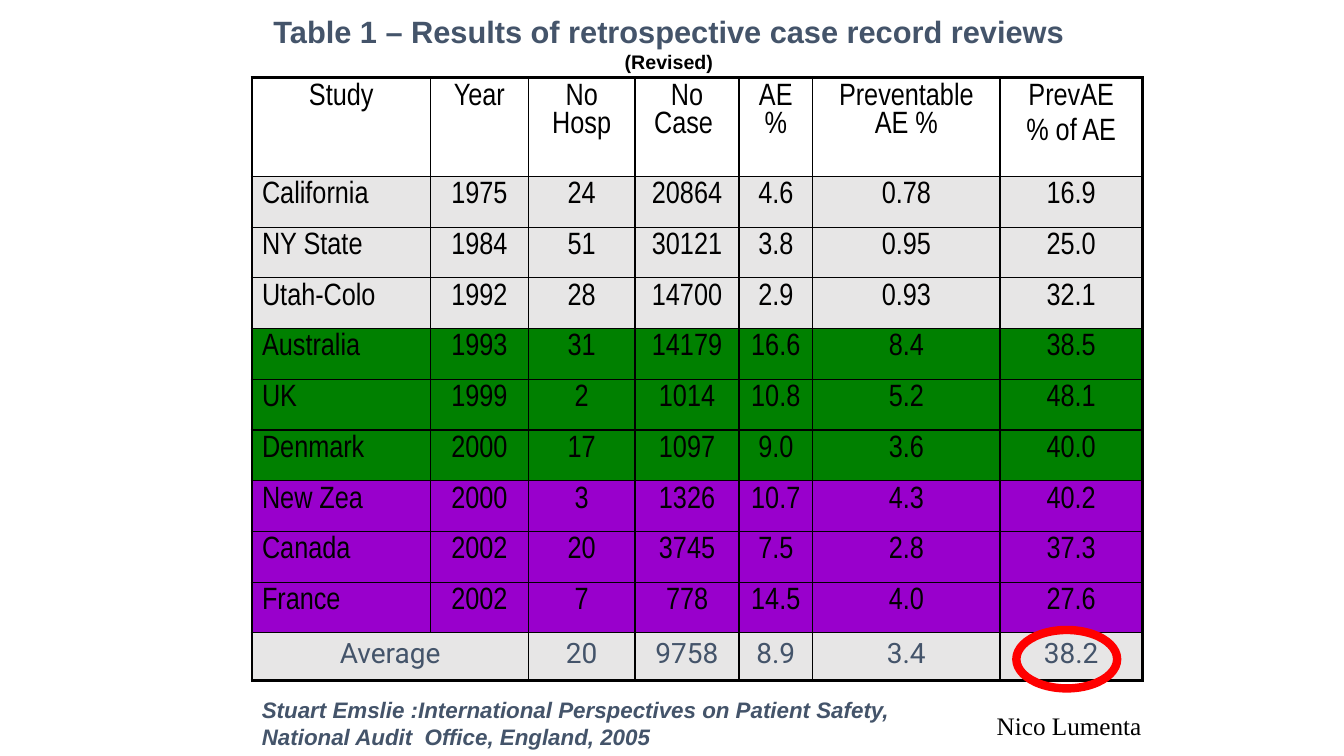
from pptx import Presentation
from pptx.dml.color import RGBColor
from pptx.enum.shapes import MSO_SHAPE
from pptx.enum.text import PP_ALIGN
from pptx.oxml import parse_xml
from pptx.oxml.ns import nsdecls
from pptx.util import Inches, Pt

SLIDE_WIDTH, SLIDE_HEIGHT = Inches(13.33), Inches(7.5)

COLORS = {
    "ink": "000000",
    "slate": "44546A",
    "usa": "E7E6E6",
    "green": "008000",
    "purple": "9900CC",
    "mark": "FF0000",
}

FORMATS = {
    "title": {"name": "Arial", "size": 22, "bold": True, "color": "slate"},
    "revised": {"name": "Arial", "size": 14, "bold": True, "color": "ink"},
    "body": {"name": "Arial Narrow", "size": 22, "bold": False, "color": "ink"},
    "average": {"name": "Roboto", "size": 20, "bold": False, "color": "slate"},
    "source": {"name": "Arial", "size": 16, "bold": True, "italic": True, "color": "slate"},
    "author": {"name": "Times New Roman", "size": 18, "color": "ink"},
}

# Widths and heights in hundredths of the slide
COLUMN_WIDTHS = [13.28, 7.28, 7.95, 7.73, 5.48, 13.95, 10.58]
HEADER_HEIGHT, STUDY_HEIGHT, AVERAGE_HEIGHT = 13.07, 6.71, 6.27

HEADER = ["Study", "Year", "No Hosp", "No Case ", "AE %", "Preventable AE %", "PrevAE\n% of AE"]
STUDIES = [
    ["California", "1975", "24", "20864", "4.6", "0.78", "16.9"],
    ["NY State", "1984", "51", "30121", "3.8", "0.95", "25.0"],
    ["Utah-Colo", "1992", "28", "14700", "2.9", "0.93", "32.1"],
    ["Australia", "1993", "31", "14179", "16.6", "8.4", "38.5"],
    ["UK", "1999", "2", "1014", "10.8", "5.2", "48.1"],
    ["Denmark", "2000", "17", "1097", "9.0", "3.6", "40.0"],
    ["New Zea", "2000", "3", "1326", "10.7", "4.3", "40.2"],
    ["Canada", "2002", "20", "3745", "7.5", "2.8", "37.3"],
    ["France", "2002", "7", "778", "14.5", "4.0", "27.6"],
]
AVERAGE = ["Average", "", "20", "9758", "8.9", "3.4", "38.2"]
STUDY_GROUPS = ["usa", "green", "purple"]
GROUP_SIZE = 3


def across(columns):
    return int(SLIDE_WIDTH * columns / 100)


def down(rows):
    return int(SLIDE_HEIGHT * rows / 100)


def area(left, top, width, height):
    return across(left), down(top), across(width), down(height)


def rgb(key):
    return RGBColor.from_string(COLORS[key])


def add_run(paragraph, text, style):
    run = paragraph.add_run()
    run.text = text
    for attribute, value in FORMATS[style].items():
        if attribute == "color":
            run.font.color.rgb = rgb(value)
        else:
            setattr(run.font, attribute, Pt(value) if attribute == "size" else value)


def write_lines(frame, lines, align, gap=0):
    """Each line is a list of (text, style) runs."""
    for index, runs in enumerate(lines):
        paragraph = frame.add_paragraph() if index else frame.paragraphs[0]
        paragraph.alignment = align
        if index and gap:
            paragraph.space_before = Pt(gap)
        for text, style in runs:
            add_run(paragraph, text, style)


def add_text(slide, place, lines, align, wrap=True):
    frame = slide.shapes.add_textbox(*area(*place)).text_frame
    frame.word_wrap = wrap
    write_lines(frame, lines, align)


def set_borders(cell, widths):
    properties = cell._tc.get_or_add_tcPr()
    for side in "LRTB":
        properties.append(parse_xml(
            f'<a:ln{side} {nsdecls("a")} w="{Pt(widths[side])}"><a:solidFill>'
            f'<a:srgbClr val="{COLORS["ink"]}"/></a:solidFill></a:ln{side}>'
        ))


def add_review_table(slide):
    rows = [HEADER, *STUDIES, AVERAGE]
    heights = [HEADER_HEIGHT] + [STUDY_HEIGHT] * len(STUDIES) + [AVERAGE_HEIGHT]
    last_row, last_column = len(rows) - 1, len(HEADER) - 1
    place = area(18.75, 10.27, sum(COLUMN_WIDTHS), sum(heights))
    table = slide.shapes.add_table(len(rows), len(HEADER), *place).table
    table.first_row = table.horz_banding = False

    for column, width in zip(table.columns, COLUMN_WIDTHS):
        column.width = across(width)
    for row, height in zip(table.rows, heights):
        row.height = down(height)

    for r, values in enumerate(rows):
        is_study = 0 < r < last_row
        group = STUDY_GROUPS[(r - 1) // GROUP_SIZE] if is_study else "usa"
        style = "average" if r == last_row else "body"
        for c, value in enumerate(values):
            cell = table.cell(r, c)
            outer = {"L": c == 0, "R": c == last_column, "T": r == 0, "B": r == last_row}
            set_borders(cell, {side: 2.25 if edge else 1 for side, edge in outer.items()})
            if r == 0:
                cell.fill.background()
            else:
                cell.fill.solid()
                cell.fill.fore_color.rgb = rgb(group)
            align = PP_ALIGN.LEFT if is_study and c == 0 else PP_ALIGN.CENTER
            if value:
                lines = [[(line, style)] for line in value.split("\n")]
                write_lines(cell.text_frame, lines, align, gap=4.4)
    table.cell(last_row, 0).merge(table.cell(last_row, 1))


def add_ring(slide, place):
    ring = slide.shapes.add_shape(MSO_SHAPE.OVAL, *area(*place))
    ring.shadow.inherit = False
    ring.fill.background()
    ring.line.color.rgb = rgb("mark")
    ring.line.width = Pt(6)


def main():
    deck = Presentation()
    deck.slide_width, deck.slide_height = SLIDE_WIDTH, SLIDE_HEIGHT
    slide = deck.slides.add_slide(deck.slide_layouts[6])

    # Source reference
    add_text(slide, (18.75, 91.47, 48.46, 8.53), [
        [("Stuart Emslie :International Perspectives on Patient Safety,", "source")],
        [("National Audit  Office, England, 2005", "source")],
    ], PP_ALIGN.LEFT, wrap=False)

    # Results
    add_review_table(slide)

    # Title
    add_text(slide, (18.75, 1.07, 62.04, 9.47), [[
        ("Table 1 – Results of retrospective case record reviews ", "title"),
        ("(Revised)", "revised"),
    ]], PP_ALIGN.CENTER)

    # Highlighted average and author
    add_ring(slide, (75.62, 83.33, 7.5, 7.73))
    add_text(slide, (70.67, 93.33, 15, 5.33), [[("Nico Lumenta", "author")]], PP_ALIGN.RIGHT)

    deck.save("out.pptx")


if __name__ == "__main__":
    main()
